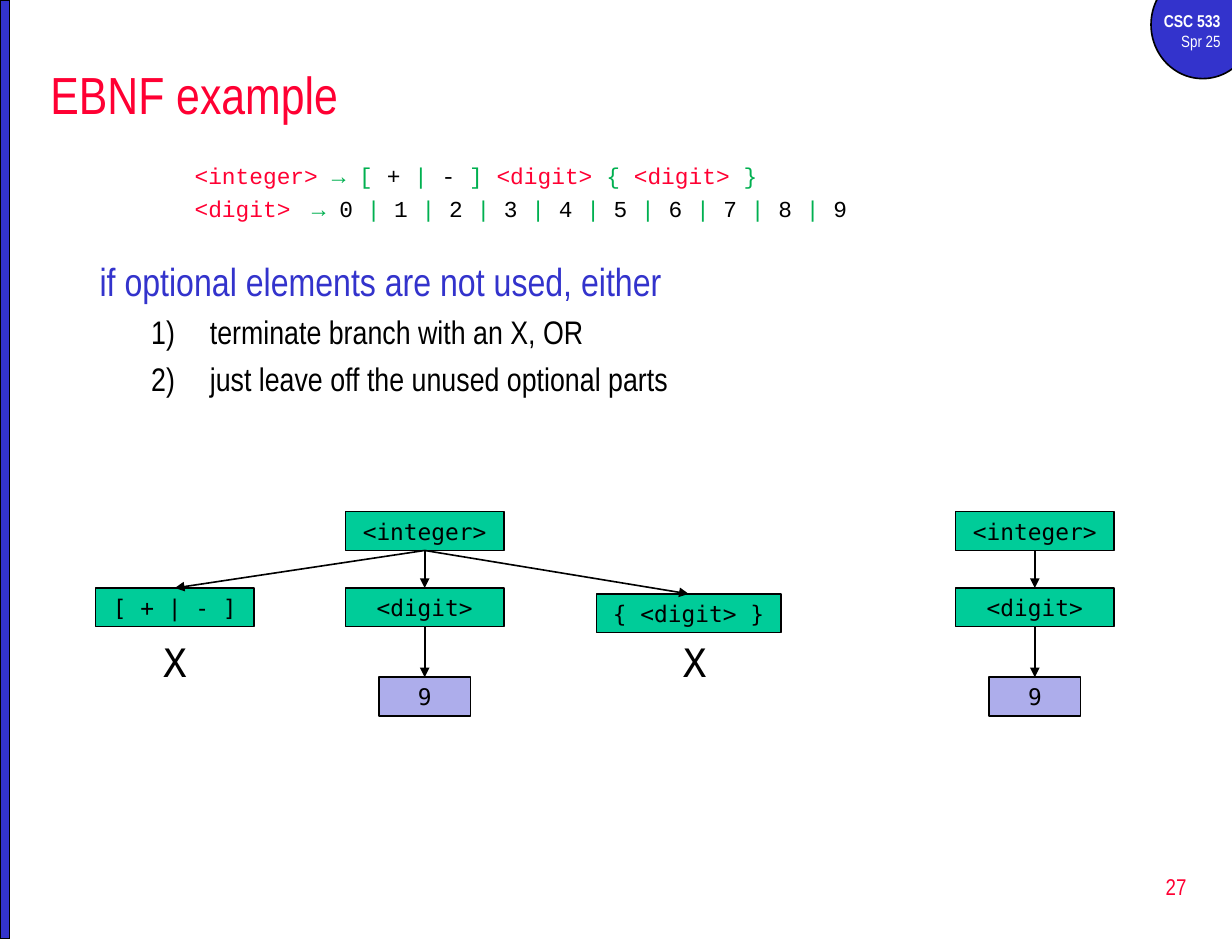
from dataclasses import dataclass

from pptx import Presentation
from pptx.dml.color import RGBColor
from pptx.enum import shapes, text
from pptx.oxml.ns import qn
from pptx.util import Inches, Pt
from lxml import etree

RED = RGBColor(0xFF, 0x00, 0x33)
BLUE = RGBColor(0x33, 0x33, 0xCC)
GREEN = RGBColor(0x00, 0xB0, 0x50)
TEAL = RGBColor(0x00, 0xCC, 0x99)
LILAC = RGBColor(0xAD, 0xAD, 0xEB)
BLACK = RGBColor(0, 0, 0)
WHITE = RGBColor(0xFF, 0xFF, 0xFF)

NARROW, COURIER, MONO = "Arial Narrow", "Courier New", "DejaVu Sans Mono"
LEFT, CENTER, RIGHT = text.PP_ALIGN.LEFT, text.PP_ALIGN.CENTER, text.PP_ALIGN.RIGHT
NODE_H = 0.33


@dataclass(frozen=True)
class Node:
    label: str
    cx: float
    y: float
    w: float = 1.35
    fill: RGBColor = TEAL

    @property
    def top(self) -> tuple[float, float]:
        return self.cx, self.y

    @property
    def bottom(self) -> tuple[float, float]:
        return self.cx, self.y + NODE_H


def add_run(p, words: str, size: float, font: str, color: RGBColor, bold: bool = False) -> None:
    r = p.add_run()
    r.text = words
    for name, value in {"size": Pt(size), "name": font, "bold": bold}.items():
        setattr(r.font, name, value)
    r.font.color.rgb = color


def add_box(parent, x: float, y: float, w: float, h: float):
    tf = parent.add_textbox(Inches(x), Inches(y), Inches(w), Inches(h)).text_frame
    tf.word_wrap = True
    return tf


def add_filled(parent, kind, x: float, y: float, w: float, h: float, fill: RGBColor):
    sp = parent.add_shape(kind, Inches(x), Inches(y), Inches(w), Inches(h))
    sp.shadow.inherit = False
    sp.fill.solid()
    sp.fill.fore_color.rgb = fill
    sp.line.color.rgb = BLACK
    sp.line.width = Pt(1)
    return sp


def add_node(parent, node: Node) -> None:
    sp = add_filled(parent, shapes.MSO_SHAPE.RECTANGLE,
                    node.cx - node.w / 2, node.y, node.w, NODE_H, node.fill)
    tf = sp.text_frame
    tf.word_wrap = False
    tf.vertical_anchor = text.MSO_ANCHOR.MIDDLE
    p = tf.paragraphs[0]
    p.alignment = CENTER
    add_run(p, node.label, 14, MONO, BLACK)


def add_arrow(parent, start: Node, end: Node) -> None:
    ends = [Inches(v) for v in (*start.bottom, *end.top)]
    line = parent.add_connector(shapes.MSO_CONNECTOR.STRAIGHT, *ends)
    line.line.color.rgb = BLACK
    line.line.width = Pt(1)
    etree.SubElement(line.line._get_or_add_ln(), qn("a:tailEnd"), type="triangle")
    etree.SubElement(line._element.spPr, qn("a:effectLst"))


def add_tree(slide, root: Node, children: list[Node], digit: Node, leaf: Node,
             unused: list[tuple[float, float]]) -> None:
    """Draw a parse tree; unused holds the top centre of each X mark."""
    parent = slide.shapes.add_group_shape().shapes
    for node in (root, *children, leaf):
        add_node(parent, node)
    for child in children:
        add_arrow(parent, root, child)
    add_arrow(parent, digit, leaf)
    for cx, y in unused:
        p = add_box(parent, cx - 0.42, y, 0.84, 0.5).paragraphs[0]
        p.alignment = CENTER
        add_run(p, "X", 24, MONO, BLACK)


def format_paragraph(p, before: float, margin: float, indent: float = 0) -> None:
    p.space_before = Pt(before)
    pPr = p._p.get_or_add_pPr()
    pPr.set("marL", str(Inches(margin)))
    pPr.set("indent", str(Inches(indent)))


def token_color(token: str) -> RGBColor:
    if token.startswith("<"):
        return RED
    return GREEN if token.strip() in "→[]{}|" else BLACK


def add_body(slide) -> None:
    tf = add_box(slide.shapes, 0.75, 1.33, 9.52, 1.83)
    rules = ["<integer> → [ + | - ] <digit> { <digit> }",
             "<digit> \t→ " + " | ".join(str(d) for d in range(10))]
    for i, rule in enumerate(rules):
        p = tf.add_paragraph() if i else tf.paragraphs[0]
        format_paragraph(p, 3.2, 0.81)
        tokens = rule.split(" ")
        for n, token in enumerate(tokens, 1):
            space = " " if n < len(tokens) else ""
            add_run(p, token + space, 14, COURIER, token_color(token))

    p = tf.add_paragraph()
    format_paragraph(p, 22, 0)
    add_run(p, "if optional elements are not used, either", 24, NARROW, BLUE)

    for option in ("terminate branch with an X, OR",
                   "just leave off the unused optional parts"):
        p = tf.add_paragraph()
        format_paragraph(p, 4.6, 0.94, -0.5)
        etree.SubElement(p._p.get_or_add_pPr(), qn("a:buAutoNum"), type="arabicParenR")
        add_run(p, option, 20, NARROW, BLACK)


def add_frame(slide) -> None:
    """Draw the course badge, side bar and page number."""
    add_filled(slide.shapes, shapes.MSO_SHAPE.OVAL, 9.81, -0.25, 0.88, 0.92, BLUE)
    add_filled(slide.shapes, shapes.MSO_SHAPE.RECTANGLE, 0, 0, 0.08, 8, BLUE)
    tf = add_box(slide.shapes, 9.67, 0.04, 0.83, 0.46)
    tf.paragraphs[0].alignment = RIGHT
    add_run(tf.paragraphs[0], "CSC 533", 10.5, NARROW, WHITE, bold=True)
    p = tf.add_paragraph()
    p.alignment = RIGHT
    add_run(p, "Spr 25", 10, NARROW, WHITE)

    tf = add_box(slide.shapes, 8.02, 7.29, 2.19, 0.53)
    tf.vertical_anchor = text.MSO_ANCHOR.MIDDLE
    tf.paragraphs[0].alignment = RIGHT
    add_run(tf.paragraphs[0], "27", 14, NARROW, RED)


def add_title(slide) -> None:
    title = slide.shapes.title
    for name, value in {"left": 0.33, "top": 0.42, "width": 9.92, "height": 0.75}.items():
        setattr(title, name, Inches(value))
    title.text_frame.vertical_anchor = text.MSO_ANCHOR.MIDDLE
    p = title.text_frame.paragraphs[0]
    p.alignment = LEFT
    add_run(p, "EBNF example", 32, NARROW, RED)


def main() -> None:
    prs = Presentation()
    prs.slide_width, prs.slide_height = Inches(10.5), Inches(8)
    slide = prs.slides.add_slide(prs.slide_layouts[5])
    add_frame(slide)
    add_title(slide)
    add_body(slide)

    sign = Node("[ + | - ]", 1.49, 5.01)
    repeat = Node("{ <digit> }", 5.87, 5.06, 1.57)
    for cx, optional in ((3.62, [sign, repeat]), (8.82, [])):
        root = Node("<integer>", cx, 4.36)
        digit = Node("<digit>", cx, 5.01)
        leaf = Node("9", cx, 5.77, 0.78, LILAC)
        children = sorted([digit, *optional], key=lambda node: node.cx)
        marks = [(node.cx + 0.05 * (node is repeat), 5.39) for node in optional]
        add_tree(slide, root, children, digit, leaf, marks)

    prs.save("out.pptx")


if __name__ == "__main__":
    main()
